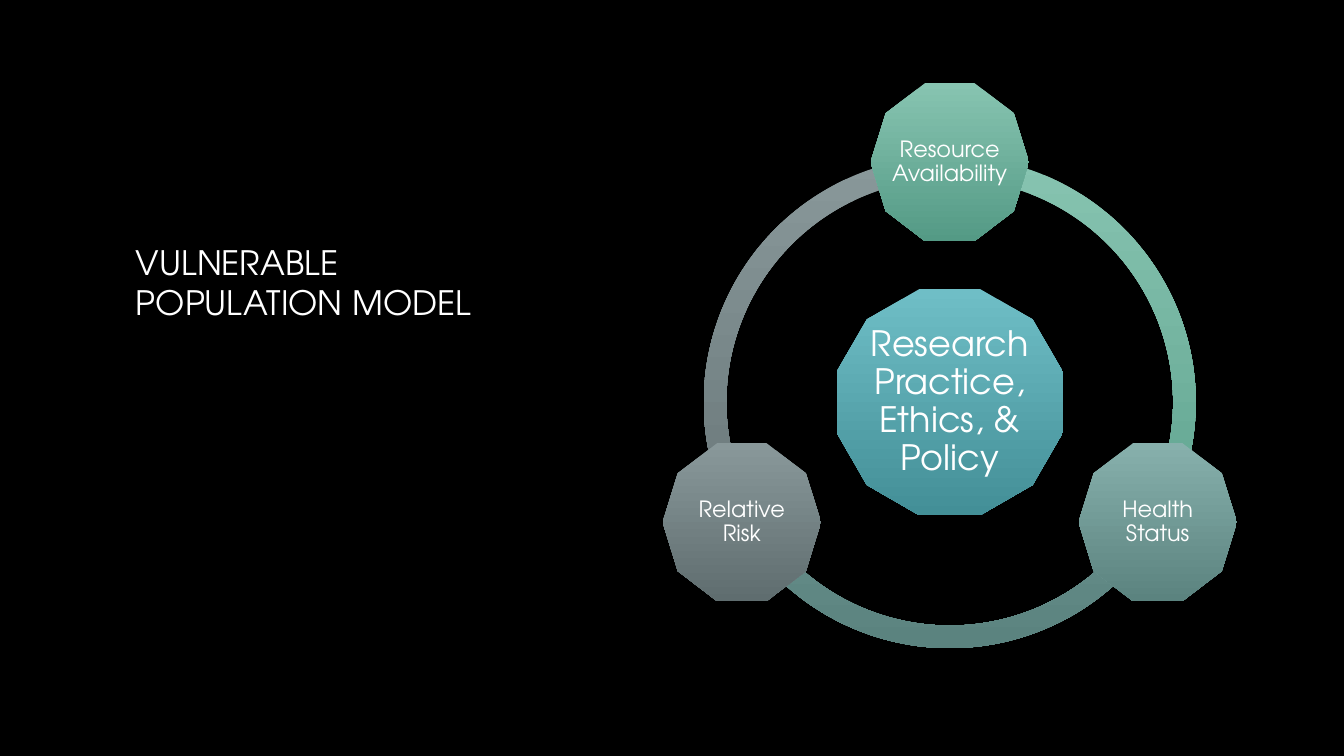
from math import cos, radians, sin

from pptx import Presentation
from pptx.dml.color import RGBColor
from pptx.enum.shapes import MSO_SHAPE as Shape
from pptx.enum.text import MSO_ANCHOR as Anchor, PP_ALIGN as Align
from pptx.util import Inches, Pt

FONT = "TeX Gyre Adventor"
COLORS = {
    "background": "000000",
    "text": "FFFFFF",
    "gray": ("89989A", "5F6D6F"),
    "sage": ("87B0AC", "5B837F"),
    "green": ("87C4B1", "549A85"),
    "teal": ("6FBEC6", "438F97"),
}
# Label, colour, clockwise angle of the node on the ring
NODES = [
    ("Resource Availability", "green", 270),
    ("Health Status", "sage", 30),
    ("Relative Risk", "gray", 150),
]


def write(frame, words, size, anchor, align, inset=0.1, spacing=1.0):
    frame.word_wrap = True
    frame.vertical_anchor = anchor
    if inset != 0.1:
        frame.margin_left = frame.margin_right = Inches(inset)
        frame.margin_top = frame.margin_bottom = Inches(inset)
    line = frame.paragraphs[0]
    line.text = words
    line.alignment = align
    line.line_spacing = spacing
    line.font.name = FONT
    line.font.size = Pt(size)
    line.font.color.rgb = RGBColor.from_string(COLORS["text"])


def add_round(slide, kind, center_x, center_y, diameter, color):
    """Place a preset shape around a centre, shaded from top to bottom."""
    round_shape = slide.shapes.add_shape(
        kind, Inches(center_x - diameter / 2), Inches(center_y - diameter / 2),
        Inches(diameter), Inches(diameter))
    round_shape.shadow.inherit = False
    round_shape.line.fill.background()
    round_shape.fill.gradient()
    round_shape.fill.gradient_angle = 270
    for stop, shade in zip(round_shape.fill.gradient_stops, COLORS[color]):
        stop.color.rgb = RGBColor.from_string(shade)
    return round_shape


def add_title(slide, left, top, width, height):
    title = slide.shapes.add_textbox(
        Inches(left), Inches(top), Inches(width), Inches(height))
    write(title.text_frame, "VULNERABLE POPULATION MODEL", 24, Anchor.BOTTOM, Align.LEFT)


def add_cycle(slide, left, top, size):
    """Draw the ring, its hub and its three nodes in a square box."""
    center_x, center_y = left + size / 2, top + size / 2

    # Ring: each arc runs 120 degrees clockwise from its node
    for _, color, angle in reversed(NODES):
        arc = add_round(slide, Shape.BLOCK_ARC, center_x, center_y, size, color)
        # Angle adjustments count 60000ths of a degree, in units of 100000
        arc.adjustments[0] = angle * 0.6
        arc.adjustments[1] = (angle + 120) % 360 * 0.6
        arc.adjustments[2] = 0.046

    # Hub
    hub = add_round(slide, Shape.DODECAGON, center_x, center_y, size * 0.46, "teal")
    write(hub.text_frame, "Research Practice, Ethics, & Policy", 25,
          Anchor.MIDDLE, Align.CENTER, 0.03, 0.9)

    # Nodes
    orbit = size * 0.488
    for label, color, angle in NODES:
        node = add_round(
            slide, Shape.DECAGON, center_x + orbit * cos(radians(angle)),
            center_y + orbit * sin(radians(angle)), size * 0.322, color)
        write(node.text_frame, label, 16, Anchor.MIDDLE, Align.CENTER, 0.02, 0.9)


def main():
    deck = Presentation()
    deck.slide_width, deck.slide_height = Inches(13.33), Inches(7.5)
    slide = deck.slides.add_slide(deck.slide_layouts[6])
    slide.background.fill.solid()
    slide.background.fill.fore_color.rgb = RGBColor.from_string(COLORS["background"])
    add_title(slide, 1.25, 1.75, 3.88, 1.5)
    add_cycle(slide, 6.98, 1.55, 4.88)
    deck.save("out.pptx")


if __name__ == "__main__":
    main()
